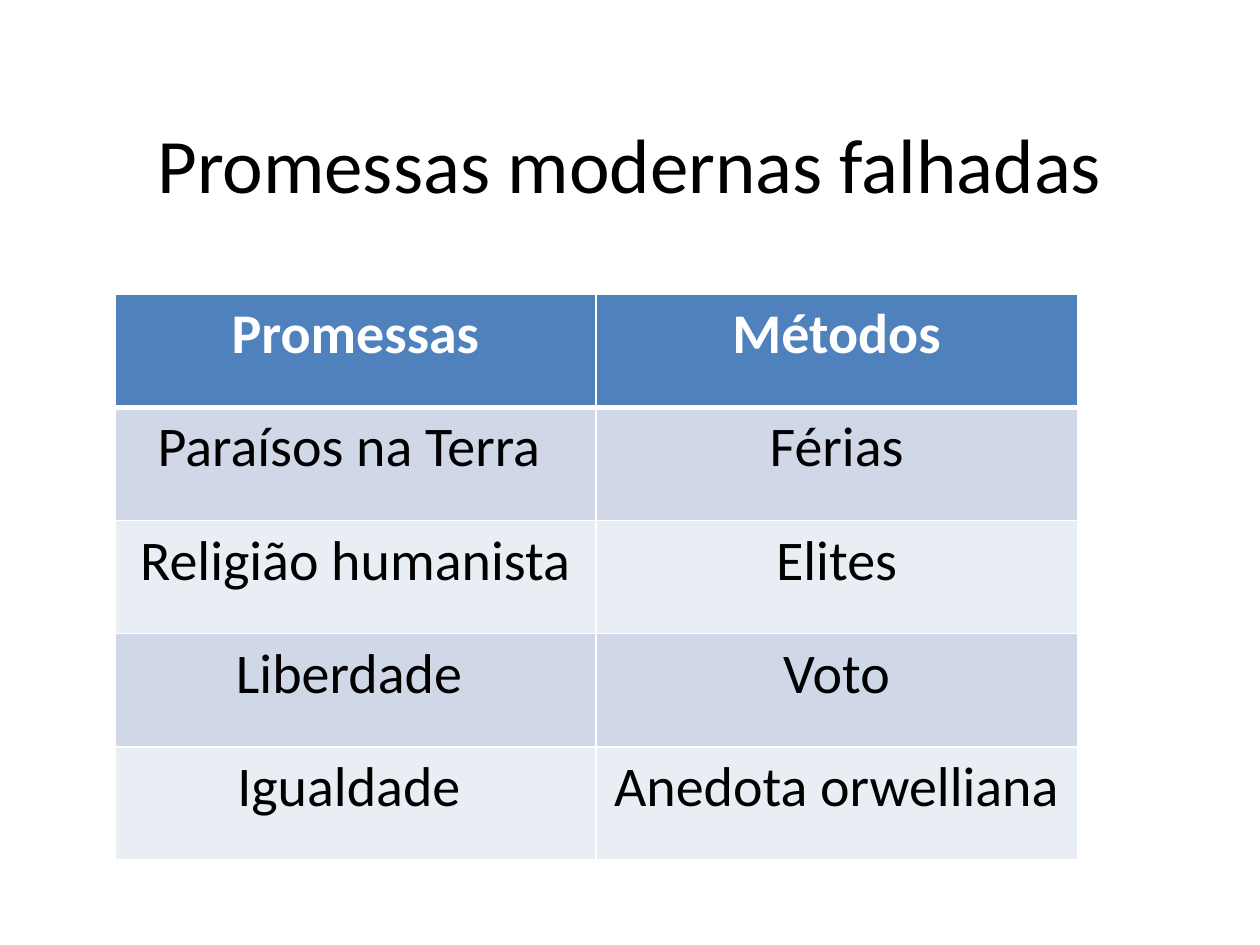
from lxml import etree
from pptx import Presentation
from pptx.dml.color import RGBColor
from pptx.enum import text
from pptx.oxml.ns import qn
from pptx.util import Pt

TITLE = "Promessas modernas falhadas"
ROWS = [
    ("Promessas", "Métodos"),
    ("Paraísos na Terra ", "Férias"),
    ("Religião humanista", "Elites"),
    ("Liberdade ", "Voto"),
    ("Igualdade ", "Anedota orwelliana"),
]
FONT = "Calibri"
HEADER_FILL, BAND_FILLS = "4F81BD", ("D0D8E8", "E9EDF4")
WHITE, BLACK = "FFFFFF", "000000"
TABLE_LEFT, TABLE_TOP = 65.6, 168
COLUMN_WIDTH, ROW_HEIGHT = 275, 64.7


def color(value):
    return RGBColor.from_string(value)


def write(frame, wording, size, ink, bold=False):
    """Put one centred line of text in a frame."""
    frame.text = wording
    line = frame.paragraphs[0]
    line.alignment = text.PP_ALIGN.CENTER
    font = line.runs[0].font
    font.name, font.size, font.bold = FONT, Pt(size), bold
    font.color.rgb = color(ink)


def draw_borders(cell, widths):
    """Add white borders; they must precede the cell's fill in the XML."""
    properties = cell._tc.get_or_add_tcPr()
    for place, (side, width) in enumerate(widths.items()):
        border = etree.Element(qn(f"a:ln{side}"), w=str(Pt(width)))
        solid = etree.SubElement(border, qn("a:solidFill"))
        etree.SubElement(solid, qn("a:srgbClr"), val=WHITE)
        properties.insert(place, border)


def add_title(slide):
    frame = slide.shapes.add_textbox(Pt(36), Pt(48), Pt(648), Pt(90)).text_frame
    frame.word_wrap = True
    frame.vertical_anchor = text.MSO_ANCHOR.MIDDLE
    write(frame, TITLE, 44, BLACK)


def add_promises(slide):
    columns = len(ROWS[0])
    table = slide.shapes.add_table(
        len(ROWS), columns, Pt(TABLE_LEFT), Pt(TABLE_TOP),
        Pt(COLUMN_WIDTH * columns), Pt(ROW_HEIGHT * len(ROWS))).table
    for column in table.columns:
        column.width = Pt(COLUMN_WIDTH)
    for r, wordings in enumerate(ROWS):
        table.rows[r].height = Pt(ROW_HEIGHT)
        header = r == 0
        for c, wording in enumerate(wordings):
            cell = table.cell(r, c)
            write(cell.text_frame, wording, 32, WHITE if header else BLACK, header)
            cell.fill.solid()
            cell.fill.fore_color.rgb = color(HEADER_FILL if header else BAND_FILLS[(r - 1) % 2])
            draw_borders(cell, {"L": 1, "R": 1, "T": 3 if r == 1 else 1, "B": 3 if header else 1})


def main():
    deck = Presentation()
    deck.slide_width, deck.slide_height = Pt(720), Pt(540)
    slide = deck.slides.add_slide(deck.slide_layouts[6])
    add_title(slide)
    add_promises(slide)
    deck.save("out.pptx")


if __name__ == "__main__":
    main()
